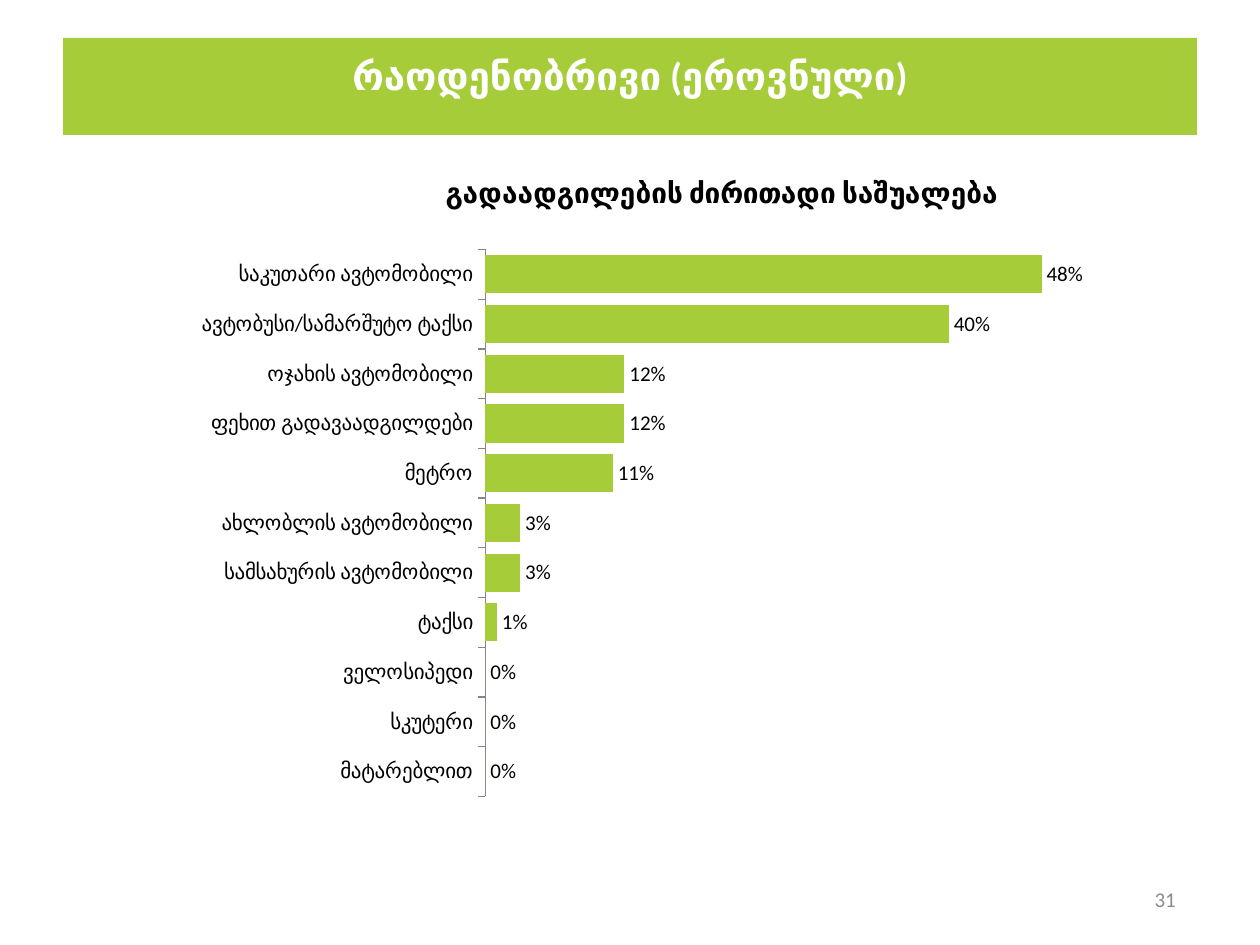
from lxml import etree
from pptx import Presentation
from pptx.chart.data import CategoryChartData
from pptx.dml.color import RGBColor
from pptx.enum.chart import XL_CHART_TYPE, XL_LABEL_POSITION, XL_TICK_MARK
from pptx.enum.text import MSO_ANCHOR, PP_ALIGN
from pptx.oxml.ns import qn
from pptx.util import Inches, Pt

BAR_CLUSTERED = XL_CHART_TYPE.BAR_CLUSTERED
OUTSIDE_END = XL_LABEL_POSITION.OUTSIDE_END
TICK_OUTSIDE, TICK_NONE = XL_TICK_MARK.OUTSIDE, XL_TICK_MARK.NONE
MIDDLE = MSO_ANCHOR.MIDDLE
CENTER, RIGHT = PP_ALIGN.CENTER, PP_ALIGN.RIGHT

COLORS = {"green": "A6CD39", "white": "FFFFFF", "black": "000000",
          "number": "8C8C8C", "axis": "868686"}
FONT = "Calibri"
TITLE_ONLY = 5

TRANSPORT_SHARES = {
    "საკუთარი ავტომობილი": 0.48,
    "ავტობუსი/სამარშუტო ტაქსი": 0.40,
    "ოჯახის ავტომობილი": 0.12,
    "ფეხით გადავაადგილდები": 0.12,
    "მეტრო": 0.11,
    "ახლობლის ავტომობილი": 0.03,
    "სამსახურის ავტომობილი": 0.03,
    "ტაქსი": 0.01,
    "ველოსიპედი": 0,
    "სკუტერი": 0,
    "მატარებლით": 0,
}


def rgb(name):
    return RGBColor.from_string(COLORS[name])


def set_manual_layout(layout, **settings):
    """Place a chart part by fractions of the chart's size."""
    for child in list(layout):
        layout.remove(child)
    manual = etree.SubElement(layout, qn("c:manualLayout"))
    for tag, value in settings.items():
        etree.SubElement(manual, qn(f"c:{tag}")).set("val", str(value))


class SlideBuilder:
    def __init__(self, slide):
        self.slide = slide

    def style(self, font, size, color, bold=False):
        font.name, font.size, font.bold = FONT, Pt(size), bold
        font.color.rgb = rgb(color)

    def add_text(self, frame, text, size, color, align, bold=False):
        frame.word_wrap = True
        frame.vertical_anchor = MIDDLE
        paragraph = frame.paragraphs[0]
        paragraph.alignment = align
        run = paragraph.add_run()
        run.text = text
        self.style(run.font, size, color, bold)

    def title_band(self, text, left, top, width, height):
        band = self.slide.shapes.title
        band.left, band.top = Inches(left), Inches(top)
        band.width, band.height = Inches(width), Inches(height)
        band.fill.solid()
        band.fill.fore_color.rgb = rgb("green")
        band.text_frame.margin_bottom = Inches(0.22)
        self.add_text(band.text_frame, text, 22, "white", CENTER, bold=True)

    def page_number(self, text, left, top, width, height):
        box = self.slide.shapes.add_textbox(
            Inches(left), Inches(top), Inches(width), Inches(height))
        self.add_text(box.text_frame, text, 12, "number", RIGHT)

    def bar_chart(self, heading, shares, left, top, width, height):
        data = CategoryChartData(number_format="0%")
        data.categories = list(shares)
        data.add_series("Series 1", list(shares.values()))
        chart = self.slide.shapes.add_chart(
            BAR_CLUSTERED, Inches(left), Inches(top),
            Inches(width), Inches(height), data).chart
        self.style(chart.font, 18, "black")
        chart.has_legend = False
        self.chart_heading(chart, heading)
        self.chart_axes(chart)
        self.chart_bars(chart.plots[0])
        self.chart_plot_area(chart)

    def chart_heading(self, chart, heading):
        chart.has_title = True
        title = chart.chart_title
        run = title.text_frame.paragraphs[0].add_run()
        run.text = heading
        self.style(run.font, 16, "black", bold=True)
        layout = title._element.find(qn("c:layout"))
        if layout is None:
            layout = etree.Element(qn("c:layout"))
            title._element.find(qn("c:tx")).addnext(layout)
        set_manual_layout(layout, xMode="edge", yMode="edge", x=0.33, y=0.02)

    def chart_axes(self, chart):
        categories = chart.category_axis
        categories.reverse_order = True
        categories.has_major_gridlines = False
        categories.major_tick_mark = TICK_OUTSIDE
        categories.minor_tick_mark = TICK_NONE
        categories.format.line.color.rgb = rgb("axis")
        self.style(categories.tick_labels.font, 12, "black")
        values = chart.value_axis
        values.minimum_scale, values.maximum_scale = 0, 0.6
        values.major_unit = 10
        values.has_major_gridlines = False
        values.visible = False

    def chart_bars(self, plot):
        plot.gap_width = 30
        plot.vary_by_categories = False
        fill = plot.series[0].format.fill
        fill.solid()
        fill.fore_color.rgb = rgb("green")
        plot.has_data_labels = True
        labels = plot.data_labels
        labels.show_value = True
        labels.position = OUTSIDE_END
        labels.number_format = "0%"
        labels.number_format_is_linked = False
        self.style(labels.font, 12, "black")

    def chart_plot_area(self, chart):
        area = chart._chartSpace.chart.plotArea
        layout = area.find(qn("c:layout"))
        if layout is None:
            layout = etree.Element(qn("c:layout"))
            area.insert(0, layout)
        set_manual_layout(layout, layoutTarget="inner", xMode="edge",
                          yMode="edge", x=0.37, y=0.14, w=0.62, h=0.81)


def main():
    deck = Presentation()
    deck.slide_width, deck.slide_height = Inches(10), Inches(7.5)
    slide = deck.slides.add_slide(deck.slide_layouts[TITLE_ONLY])
    builder = SlideBuilder(slide)
    builder.title_band("რაოდენობრივი (ეროვნული)", 0.5, 0.3, 9, 0.77)
    builder.bar_chart("გადაადგილების ძირითადი საშუალება", TRANSPORT_SHARES,
                      0.56, 1.23, 8.9, 5.36)
    builder.page_number("31", 9.02, 6.94, 0.41, 0.4)
    deck.save("out.pptx")


if __name__ == "__main__":
    main()
